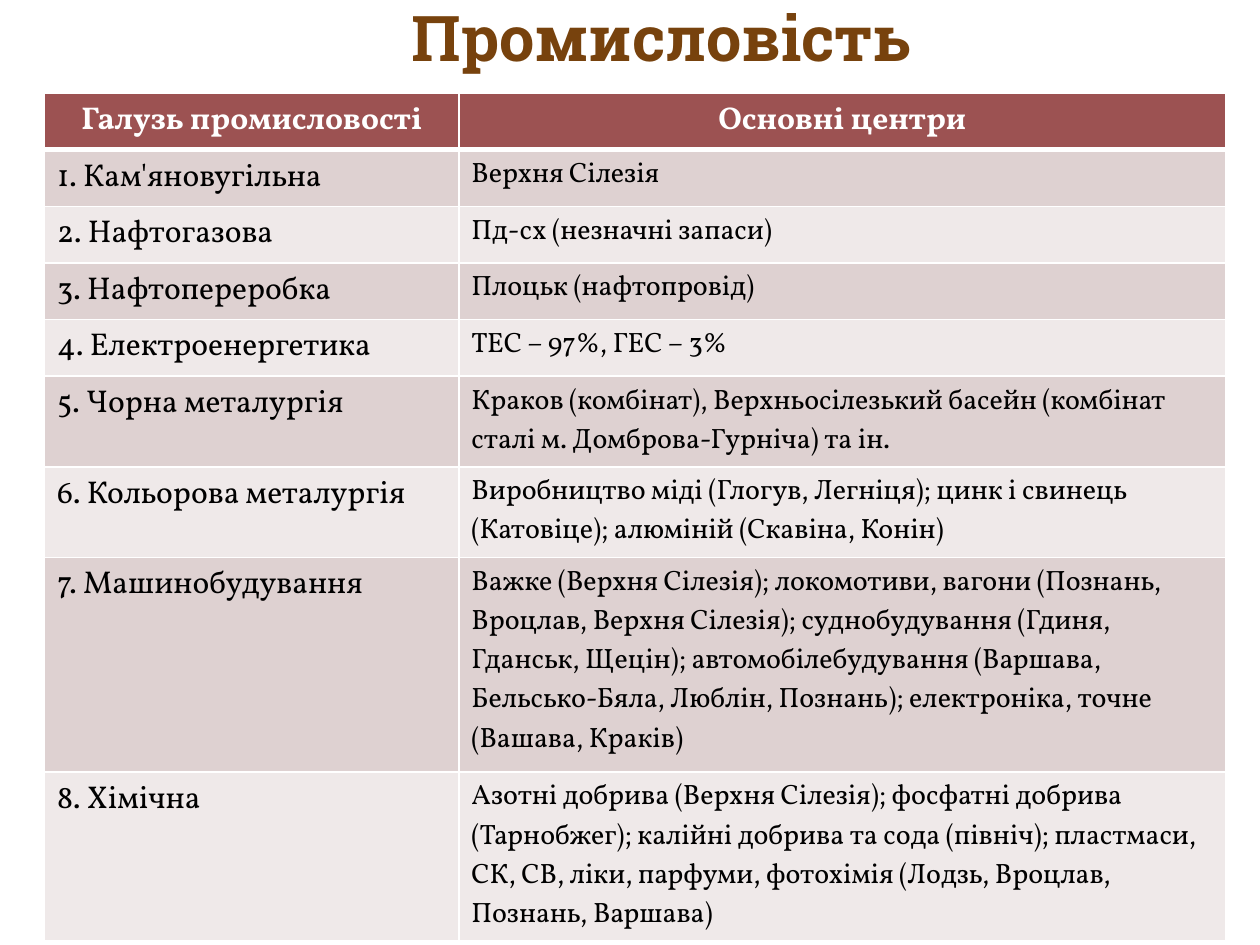
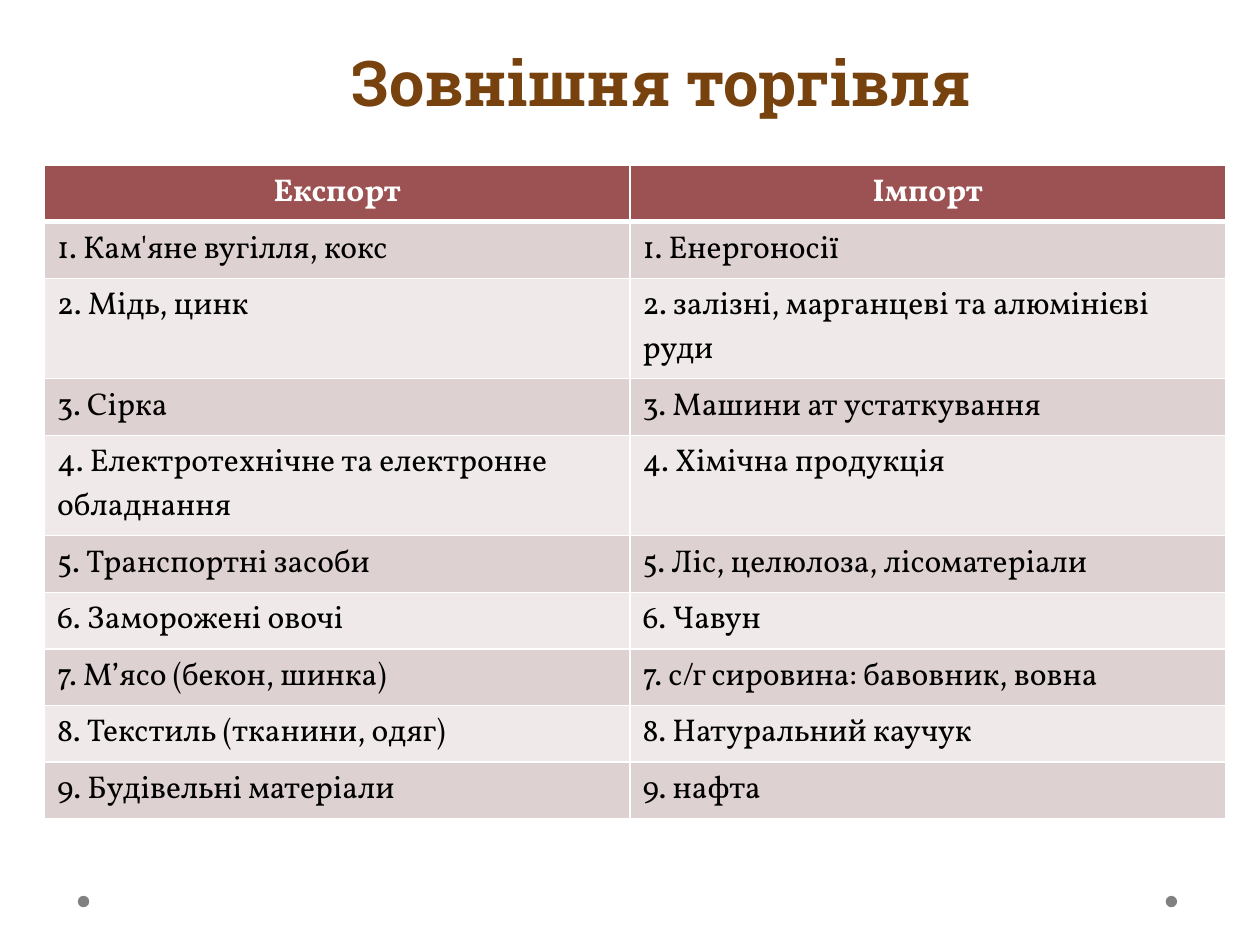
from lxml.etree import SubElement
from pptx import Presentation
from pptx.dml.color import RGBColor
from pptx.enum.shapes import MSO_SHAPE as Form
from pptx.enum.text import MSO_ANCHOR as Anchor, MSO_AUTO_SIZE as Fit, PP_ALIGN as Align
from pptx.oxml.ns import qn
from pptx.util import Cm, Pt

BROWN, WINE, GREY = "77420D", "9C5252", "808080"
WHITE, BLACK = "FFFFFF", "000000"
BANDS = ("DED1D1", "EFE9E9")
HEAD, BODY = "Roboto Slab", "Vollkorn"
LEFT, LOW = 0.9, 1.04

SECTORS = [
    ("Галузь промисловості", "Основні центри"),
    ("1. Кам'яновугільна", "Верхня Сілезія"),
    ("2. Нафтогазова", "Пд-сх (незначні запаси)"),
    ("3. Нафтопереробка", "Плоцьк (нафтопровід)"),
    ("4. Електроенергетика", "ТЕС – 97%, ГЕС – 3%"),
    ("5. Чорна металургія",
     "Краков (комбінат), Верхньосілезький басейн (комбінат "
     "сталі м. Домброва-Гурніча) та ін."),
    ("6. Кольорова металургія",
     "Виробництво міді (Глогув, Легніця); цинк і свинець "
     "(Катовіце); алюміній (Скавіна, Конін)"),
    ("7. Машинобудування",
     "Важке (Верхня Сілезія); локомотиви, вагони (Познань, Вроцлав, "
     "Верхня Сілезія); суднобудування (Гдиня, Гданськ, Щецін); "
     "автомобілебудування (Варшава, Бельсько-Бяла, Люблін, Познань); "
     "електроніка, точне (Вашава, Краків)"),
    ("8. Хімічна",
     "Азотні добрива (Верхня Сілезія); фосфатні добрива (Тарнобжег); "
     "калійні добрива та сода (північ); пластмаси, СК, СВ, ліки, парфуми, "
     "фотохімія (Лодзь, Вроцлав, Познань, Варшава)"),
]

TRADE = [
    ("Експорт", "Імпорт"),
    ("1. Кам'яне вугілля, кокс", "1. Енергоносії"),
    ("2. Мідь, цинк", "2. залізні, марганцеві та алюмінієві руди"),
    ("3. Сірка", "3. Машини ат устаткування"),
    ("4. Електротехнічне та електронне обладнання", "4. Хімічна продукція"),
    ("5. Транспортні засоби", "5. Ліс, целюлоза, лісоматеріали"),
    ("6. Заморожені овочі", "6. Чавун"),
    ("7. М’ясо (бекон, шинка)", "7. с/г сировина: бавовник, вовна"),
    ("8. Текстиль (тканини, одяг)", "8. Натуральний каучук"),
    ("9. Будівельні матеріали", "9. нафта"),
]


def color(code):
    return RGBColor.from_string(code)


def style(para, face, size, code, bold, align):
    para.alignment = align
    font = para.font
    font.name, font.size, font.bold = face, Pt(size), bold
    font.color.rgb = color(code)


def add_dots(slide):
    for x in (23.5, 1.57):
        dot = slide.shapes.add_shape(Form.OVAL, Cm(x), Cm(18.06), Cm(0.23), Cm(0.23))
        dot.shadow.inherit = False
        dot.fill.solid()
        dot.fill.fore_color.rgb = color(GREY)
        dot.line.fill.background()


def set_title(slide, text, top):
    title = slide.shapes.title
    title.left, title.top = Cm(1.09), Cm(top)
    title.width, title.height = Cm(24), Cm(1.63)
    frame = title.text_frame
    frame.text = text
    frame.auto_size = Fit.NONE
    frame.vertical_anchor = Anchor.BOTTOM
    para = frame.paragraphs[0]
    props = para._p.get_or_add_pPr()
    props.set("marL", str(Cm(0.5)))
    props.set("indent", "0")
    style(para, HEAD, 36, BROWN, True, Align.CENTER)


def set_edges(cell, row):
    """Draw white borders, thicker between the header and the body."""
    widths = {"lnL": 1, "lnR": 1, "lnT": 3 if row == 1 else 1, "lnB": 3 if row == 0 else 1}
    props = cell._tc.get_or_add_tcPr()
    for tag, width in widths.items():
        line = SubElement(props, qn(f"a:{tag}"), w=str(Pt(width)))
        fill = SubElement(line, qn("a:solidFill"))
        SubElement(fill, qn("a:srgbClr"), val=WHITE)


def fill_cell(cell, text, row, size):
    cell.text = text
    set_edges(cell, row)
    cell.fill.solid()
    cell.fill.fore_color.rgb = color(BANDS[(row - 1) % 2] if row else WINE)
    para = cell.text_frame.paragraphs[0]
    if row:
        style(para, BODY, size, BLACK, False, Align.LEFT)
    else:
        style(para, BODY, 18, WHITE, True, Align.CENTER)


def add_grid(slide, rows, top, widths, sizes, tall):
    """Add a table; tall maps a row's index to its height when not LOW."""
    highs = [tall.get(i, LOW) for i in range(len(rows))]
    grid = slide.shapes.add_table(len(rows), len(widths), Cm(LEFT), Cm(top),
                                  Cm(sum(widths)), Cm(sum(highs))).table
    for col, width in zip(grid.columns, widths):
        col.width = Cm(width)
    for i, texts in enumerate(rows):
        grid.rows[i].height = Cm(highs[i])
        for j, text in enumerate(texts):
            fill_cell(grid.cell(i, j), text, i, sizes[j])


def add_page(deck, title, shift):
    slide = deck.slides.add_slide(deck.slide_layouts[5])
    add_dots(slide)
    set_title(slide, title, shift)
    return slide


def main():
    deck = Presentation()
    deck.slide_width, deck.slide_height = Cm(25.4), Cm(19.05)

    page = add_page(deck, "Промисловість", 0)
    add_grid(page, SECTORS, 1.88, (8.35, 15.46), (18, 16),
             {5: 1.6, 6: 1.6, 7: 4.32, 8: 2.97})

    page = add_page(deck, "Зовнішня торгівля", 0.89)
    add_grid(page, TRADE, 3.33, (11.8, 12.01), (18, 18), {2: 1.78, 4: 1.78})

    deck.save("out.pptx")


if __name__ == "__main__":
    main()
